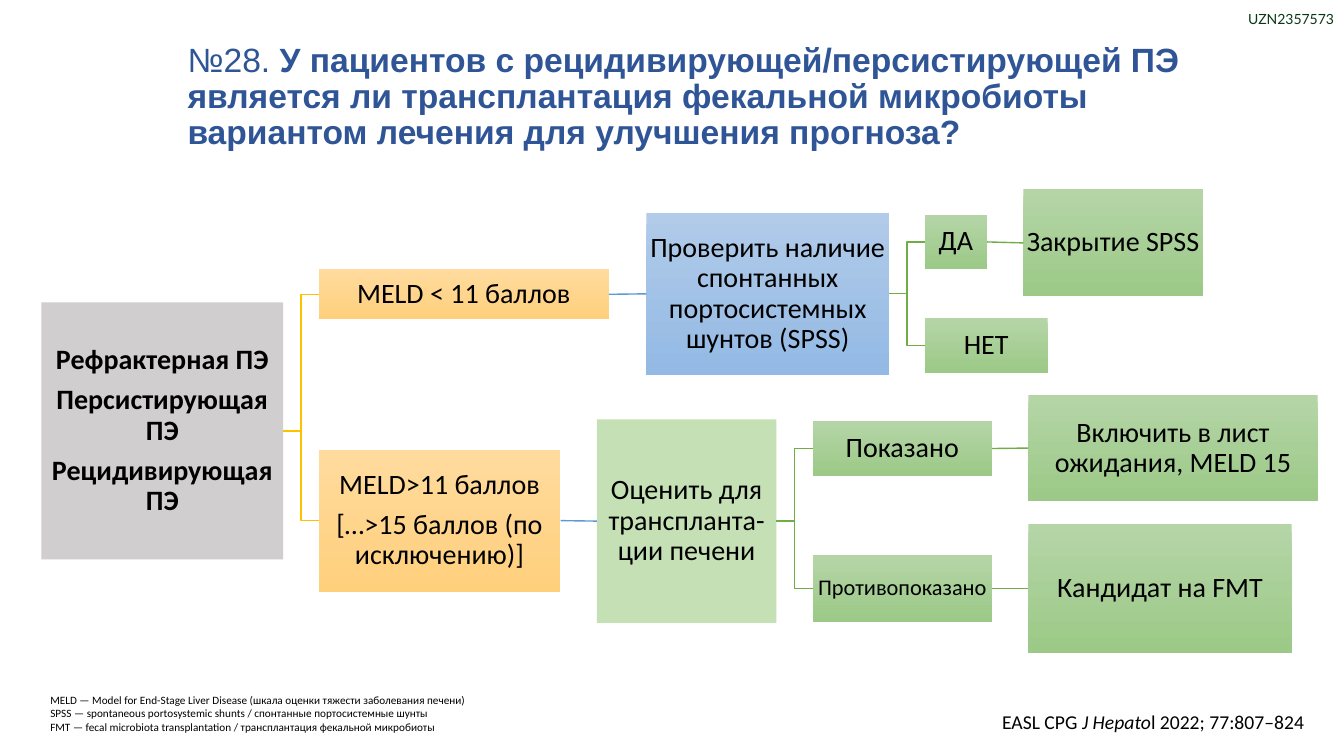
from lxml.etree import SubElement
from pptx import Presentation
from pptx.dml.color import RGBColor
from pptx.enum.shapes import MSO_CONNECTOR, MSO_SHAPE
from pptx.enum.text import MSO_ANCHOR, MSO_AUTO_SIZE, PP_ALIGN
from pptx.oxml.ns import qn
from pptx.util import Inches, Pt

BLACK = RGBColor(0x00, 0x00, 0x00)
NAVY = RGBColor(0x2F, 0x55, 0x97)
PINE = RGBColor(0x0A, 0x38, 0x15)
GREEN = RGBColor(0x70, 0xAD, 0x47)
BLUE = RGBColor(0x5B, 0x9B, 0xD5)
GOLD = RGBColor(0xFF, 0xC0, 0x00)
GREY = [RGBColor(0xD0, 0xCE, 0xCE)]
LIME = [RGBColor(0xC5, 0xE0, 0xB4)]
AMBER = [RGBColor(0xFF, 0xDB, 0x9E), RGBColor(0xFF, 0xD0, 0x7C)]
SKY = [RGBColor(0xB1, 0xCB, 0xE9), RGBColor(0x93, 0xB9, 0xE4)]
LEAF = [RGBColor(0xB5, 0xD5, 0xA7), RGBColor(0x9C, 0xC9, 0x87)]


def write(frame, lines, size=20, color=BLACK, name="Calibri", bold=False,
          align=PP_ALIGN.LEFT, pitch=None, after=0, wrap=True):
    """Fill a frame; a line is a string or a list of (text, bold, italic)."""
    frame.word_wrap = wrap
    for i, line in enumerate(lines):
        para = frame.add_paragraph() if i else frame.paragraphs[0]
        para.alignment = align
        para.line_spacing = pitch
        para.space_after = Pt(after)
        runs = [(line, bold, False)] if isinstance(line, str) else line
        for text, heavy, slant in runs:
            run = para.add_run()
            run.text = text
            font = run.font
            font.name, font.size = name, Pt(size)
            font.bold, font.italic = heavy, slant
            font.color.rgb = color


deck = Presentation()
deck.slide_width, deck.slide_height = Inches(13.33), Inches(7.5)
slide = deck.slides.add_slide(deck.slide_layouts[5])
shapes = slide.shapes

# Title
title = shapes.title
title.left, title.top = Inches(1.76), Inches(0.32)
title.width, title.height = Inches(10.6), Inches(1.3)
title.text_frame.auto_size = MSO_AUTO_SIZE.NONE
title.text_frame.vertical_anchor = MSO_ANCHOR.MIDDLE
write(title.text_frame, [[
    ("№28. ", False, False),
    ("У пациентов с рецидивирующей/персистирующей ПЭ является ли "
     "трансплантация фекальной микробиоты вариантом лечения для "
     "улучшения прогноза?", True, False)]],
    size=24, color=NAVY, name="Arial", pitch=0.9)

# Decision tree: key, left, top, width, height, fill, lines
steps = [
    ("root", 0.41, 3, 2.4, 2.55, GREY,
     ["Рефрактерная ПЭ", "Персистирующая ПЭ", "Рецидивирующая ПЭ"]),
    ("low", 3.16, 2.67, 2.88, 0.5, AMBER, ["MELD < 11 баллов"]),
    ("shunt", 6.41, 2.11, 2.41, 1.61, SKY,
     ["Проверить наличие спонтанных портосистемных шунтов (SPSS)"]),
    ("yes", 9.17, 2.13, 0.62, 0.54, LEAF, ["ДА"]),
    ("close", 10.15, 1.88, 1.78, 1.06, LEAF, ["Закрытие SPSS"]),
    ("no", 9.17, 3.16, 1.22, 0.54, LEAF, ["НЕТ"]),
    ("high", 3.16, 4.46, 2.4, 1.41, AMBER,
     ["MELD>11 баллов", "[…>15 баллов (по исключению)]"]),
    ("assess", 5.92, 4.16, 1.78, 2.02, LIME,
     ["Оценить для транспланта-ции печени"]),
    ("fit", 8.06, 4.18, 1.78, 0.54, LEAF, ["Показано"]),
    ("list", 10.2, 3.92, 2.87, 1.05, LEAF,
     ["Включить в лист ожидания, MELD 15"]),
    ("unfit", 8.06, 5.51, 1.78, 0.66, LEAF, ["Противопоказано"]),
    ("fmt", 10.2, 5.2, 2.61, 1.28, LEAF, ["Кандидат на FMT"]),
]
boxes = {}
for key, left, top, width, height, fill, lines in steps:
    box = shapes.add_shape(MSO_SHAPE.RECTANGLE, Inches(left), Inches(top),
                           Inches(width), Inches(height))
    box.shadow.inherit = False
    box.line.fill.background()
    if len(fill) == 1:
        box.fill.solid()
        box.fill.fore_color.rgb = fill[0]
    else:
        box.fill.gradient()
        box.fill.gradient_angle = 270
        for stop, color, place in zip(box.fill.gradient_stops, fill, (0, 1)):
            stop.color.rgb, stop.position = color, place
    frame = box.text_frame
    frame.margin_left = frame.margin_right = Inches(0.01)
    frame.margin_top = frame.margin_bottom = Inches(0.01)
    frame.vertical_anchor = MSO_ANCHOR.MIDDLE
    write(frame, lines, size=16 if key == "unfit" else 20,
          bold=key == "root", align=PP_ALIGN.CENTER, pitch=0.9, after=7)
    boxes[key] = box

# Links run from the right side of one box to the left side of the next
links = [
    ("root", "low", GOLD), ("root", "high", GOLD),
    ("low", "shunt", BLUE), ("high", "assess", BLUE),
    ("shunt", "yes", GREEN), ("shunt", "no", GREEN), ("yes", "close", GREEN),
    ("assess", "fit", GREEN), ("assess", "unfit", GREEN),
    ("fit", "list", GREEN), ("unfit", "fmt", GREEN),
]
forks = ("root", "shunt", "assess")
for start, end, color in links:
    kind = MSO_CONNECTOR.ELBOW if start in forks else MSO_CONNECTOR.STRAIGHT
    link = shapes.add_connector(kind, 0, 0, 0, 0)
    link.begin_connect(boxes[start], 3)
    link.end_connect(boxes[end], 1)
    link.line.color.rgb = color
    link.line.width = Pt(1)
    SubElement(link._element.spPr, qn("a:effectLst"))

# Source, code and abbreviations: left, top, width, height, lines, format
notes = [
    (9.84, 6.99, 3.23, 0.34,
     [[("EASL CPG ", False, False), ("J Hepato", False, True),
       ("l 2022; 77:807–824", False, False)]], dict(size=14, wrap=False)),
    (12.28, 0.06, 1.49, 0.27, ["UZN2357573"],
     dict(size=10, color=PINE, name="Lato")),
    (0.4, 6.83, 6.89, 0.5,
     ["MELD — Model for End-Stage Liver Disease "
      "(шкала оценки тяжести заболевания печени)",
      "SPSS — spontaneous portosystemic shunts / "
      "спонтанные портосистемные шунты",
      "FMT — fecal microbiota transplantation / "
      "трансплантация фекальной микробиоты"], dict(size=8)),
]
for left, top, width, height, lines, style in notes:
    note = shapes.add_textbox(Inches(left), Inches(top),
                              Inches(width), Inches(height))
    write(note.text_frame, lines, **style)

deck.save("out.pptx")
